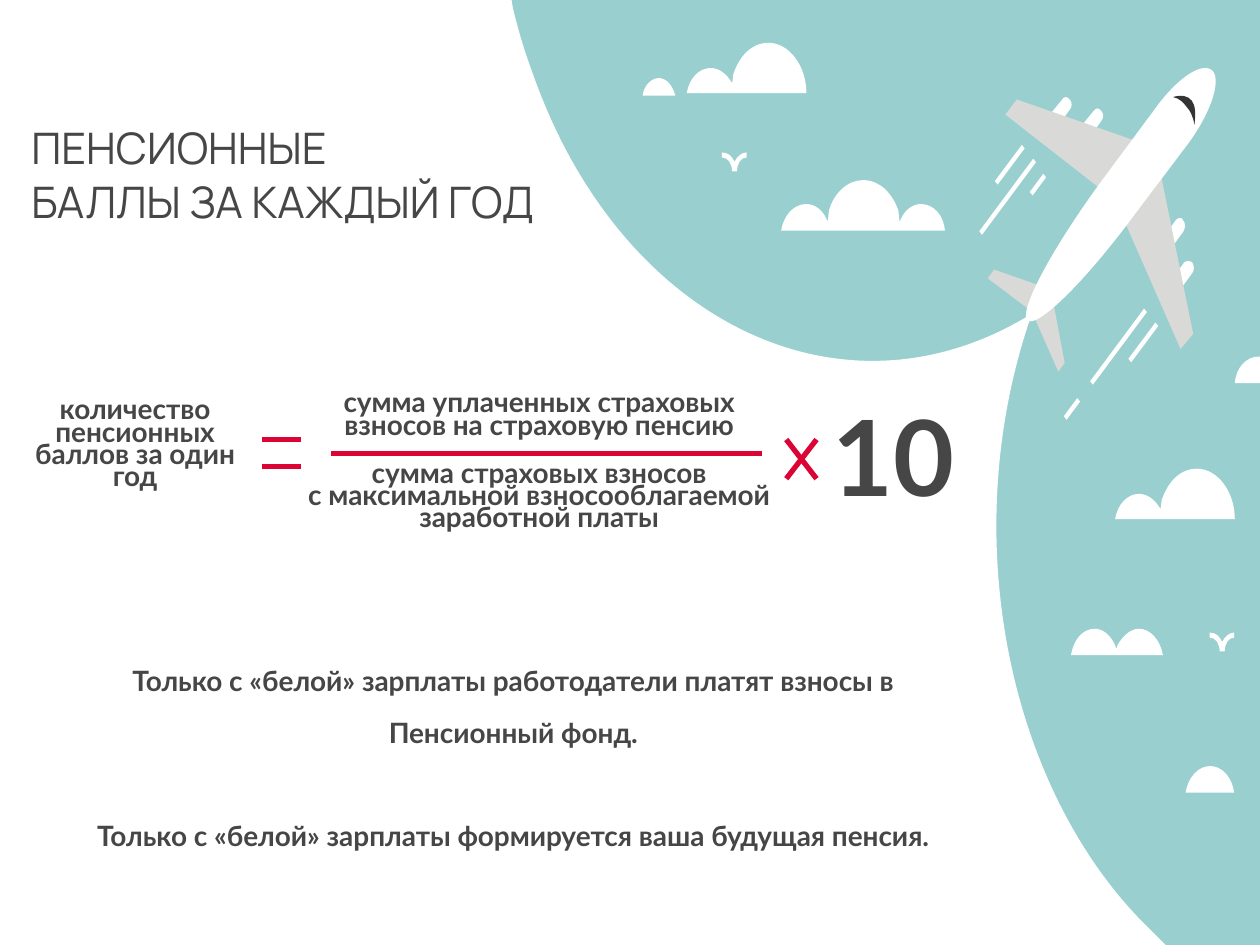
from lxml import etree
from pptx import Presentation
from pptx.dml.color import RGBColor
from pptx.enum.shapes import MSO_CONNECTOR, MSO_SHAPE
from pptx.enum.text import MSO_ANCHOR, MSO_AUTO_SIZE, PP_ALIGN
from pptx.oxml.ns import qn
from pptx.util import Cm, Pt

LINE = MSO_CONNECTOR.STRAIGHT
RECT = MSO_SHAPE.RECTANGLE
TOP = MSO_ANCHOR.TOP
NO_FIT = MSO_AUTO_SIZE.NONE
LEFT, CENTER = PP_ALIGN.LEFT, PP_ALIGN.CENTER

TEAL = RGBColor(0x99, 0xD0, 0xCF)
WHITE = RGBColor(0xFF, 0xFF, 0xFF)
GREY = RGBColor(0xD9, 0xD9, 0xD8)
BLACK = RGBColor(0x34, 0x34, 0x34)
TEXT = RGBColor(0x46, 0x46, 0x46)
RED = RGBColor(0xDC, 0x04, 0x35)

UNIT = Cm(2.54) / 1000

prs = Presentation()
prs.slide_width, prs.slide_height = Cm(25.4), Cm(19.05)
s = prs.slides.add_slide(prs.slide_layouts[5])


def outline(contours, fill, dx=0, dy=0):
    contours = [[[((x + dx) * 10, (y + dy) * 10) for x, y in zip(seg[::2], seg[1::2])]
                 for seg in contour] for contour in contours]
    ends = [[seg[-1] for seg in contour] for contour in contours]
    fb = s.shapes.build_freeform(*ends[0][0], scale=UNIT)
    for i, pts in enumerate(ends):
        if i:
            fb.move_to(*pts[0])
        fb.add_line_segments(pts[1:], close=True)
    sp = fb.convert_to_shape()
    left = min(x for pts in ends for x, y in pts)
    top = min(y for pts in ends for x, y in pts)
    segs = [seg for contour in contours for seg in contour[1:]]
    for ln, seg in zip(list(sp._element.iter(qn("a:lnTo"))), segs):
        if len(seg) == 3:
            ln.tag = qn("a:cubicBezTo")
            for i, (x, y) in enumerate(seg[:2]):
                ln.insert(i, etree.Element(qn("a:pt"), x=str(round(x - left)),
                                           y=str(round(y - top))))
    sp.fill.solid()
    sp.fill.fore_color.rgb = fill
    sp.line.fill.background()
    sp.shadow.inherit = False


def write(sp, lines, size=16, font="Lato", bold=True, align=CENTER,
          spacing=0.5, before=3.2, after=0, gaps={}, top=0.13):
    tf = sp.text_frame
    tf.word_wrap = True
    tf.auto_size = NO_FIT
    tf.vertical_anchor = TOP
    tf.margin_top = Cm(top)
    for i, line in enumerate(lines):
        p = tf.paragraphs[0] if i == 0 else tf.add_paragraph()
        p.alignment = align
        p.line_spacing = spacing
        p.space_before = Pt(gaps.get(i, before) if i else 0)
        p.space_after = Pt(after)
        r = p.add_run()
        r.text = line
        r.font.size, r.font.name, r.font.bold = Pt(size), font, bold
        r.font.color.rgb = TEXT


sky = s.shapes.add_shape(RECT, Cm(10.16), Cm(0), Cm(15.24), Cm(19.05))
sky.fill.solid()
sky.fill.fore_color.rgb = TEAL
sky.line.fill.background()
sky.shadow.inherit = False

outline([[(0, 0), (406, 0), (407, 6), (411, 23, 416, 40, 422, 56),
          (491, 256, 669, 342, 819, 249), (759, 420, 798, 619, 905, 730),
          (925, 750), (0, 750)]], WHITE)

engines = [
    [(943, 207), (944, 207, 945, 207, 946, 208), (948, 211, 948, 215, 946, 217),
     (938, 228), (935, 215), (940, 208), (941, 207, 942, 207, 943, 207)],
    [(936, 173), (937, 173, 939, 173, 939, 175), (941, 177, 941, 181, 939, 184),
     (931, 195), (928, 182), (933, 175), (934, 174, 935, 173, 936, 173)],
    [(871, 86), (872, 86, 873, 87, 874, 88), (876, 90, 876, 94, 874, 96),
     (869, 103), (859, 99), (868, 88), (869, 87, 870, 86, 871, 86)],
    [(846, 77), (847, 77, 848, 78, 849, 79), (851, 81, 851, 85, 849, 87),
     (844, 94), (834, 90), (843, 79), (843, 78, 845, 77, 846, 77)],
]
wings = [
    [(835, 235), (845, 288), (840, 295), (821, 252)],
    [(789, 214), (829, 228), (816, 245), (784, 221)],
    [(921, 141), (922, 142), (947, 265), (937, 277), (894, 179), (893, 178)],
    [(807, 79), (899, 111), (900, 113), (872, 149), (871, 148), (798, 91)],
]
fuselage = [(877, 140), (837, 194, 809, 245, 815, 254), (822, 262, 860, 225, 900, 171),
            (943, 114), (960, 91, 969, 66, 963, 57), (956, 48, 937, 60, 920, 82)]
cockpit = [(942, 85), (945, 88, 947, 93, 948, 99), (949, 91, 949, 84, 946, 80),
           (943, 76, 938, 75, 931, 77), (936, 78, 939, 81, 942, 85)]
trails = []
for x, y, n in ((855, 316, 1), (917, 256, 2), (908, 245, 4),
                (828, 138, 1), (820, 126, 4), (811, 115, 2)):
    w, h = -10.7 * n, 14.4 * n
    trails.append([(x, y), (x + 2.2, y + 2.8), (x + 2.2 + w, y + 2.8 + h), (x + w, y + h)])

outline(engines, WHITE)
outline(wings, GREY)
outline([fuselage], WHITE)
outline([cockpit], BLACK)
outline(trails, WHITE)

tall_cloud = [(65, 0), (81, 0, 95, 18, 95, 40), (0, 40), (2, 28, 10, 20, 19, 20),
              (26, 20, 32, 25, 36, 32), (36, 33), (37, 25), (42, 10, 52, 0, 65, 0)]
triple_cloud = [(65, 0), (78, 0, 88, 10, 93, 24), (94, 33), (95, 31),
                (98, 24, 104, 19, 111, 19), (121, 19, 129, 28, 130, 40), (0, 40),
                (2, 28, 10, 19, 20, 19), (27, 19, 33, 24, 36, 31), (37, 33),
                (38, 24), (42, 10, 53, 0, 65, 0)]
twin_cloud = [(19, 0), (26, 0, 32, 6, 35, 13), (36, 16), (37, 13), (41, 6, 47, 0, 54, 0),
              (63, 0, 71, 9, 73, 21), (0, 21), (2, 9, 9, 0, 19, 0)]
small_cloud = [(26, 14), (24, 6, 19, 0, 13, 0), (7, 0, 1, 6, 0, 14)]
round_cloud = [(38.5, 21), (37, 9, 29, 0, 19.5, 0), (10, 0, 2, 9, 0, 21)]
edge_cloud = [(19, 0), (20, 0), (20, 21), (0, 21), (1, 9, 9, 0, 19, 0)]
bird = [(12, 15), (8, 15), (8, 9, 5, 4, 0, 4), (0, 0), (5, 0, 8, 3, 10, 7.5),
        (12, 3, 16, 0, 19.5, 0), (19.5, 4), (15, 4, 12, 9, 12, 15)]
for shape, x, y in ((tall_cloud, 545, 34), (small_cloud, 510, 62), (triple_cloud, 620, 143),
                    (bird, 573, 121), (tall_cloud, 885, 372), (round_cloud, 941, 608),
                    (twin_cloud, 850, 499), (bird, 960, 502), (edge_cloud, 980, 283)):
    outline([shape], WHITE, x, y)

title = s.shapes.title
title._element.getparent().append(title._element)
title.left, title.top, title.width, title.height = Cm(0.38), Cm(2.59), Cm(25.4), Cm(2.13)
write(title, ["ПЕНСИОННЫЕ", "БАЛЛЫ ЗА КАЖДЫЙ ГОД"], size=24.8, font="Manrope",
      bold=False, align=LEFT, spacing=0.7, before=10)

for box, lines, style in (
    ((0.89, 12.07, 18.92, 4.52),
     ["Только с «белой» зарплаты работодатели платят взносы в", "Пенсионный фонд.",
      "Только с «белой» зарплаты формируется ваша будущая пенсия."],
     dict(spacing=0.7, before=6.5, after=10, gaps={2: 35.4}, top=1.49)),
    ((-1.67, 8.06, 8.79, 3.2),
     ["количество", "пенсионных", "баллов за один", "год"], {}),
    ((2.97, 7.92, 15.8, 4.52),
     ["сумма уплаченных страховых", "взносов на страховую пенсию",
      "сумма страховых взносов", "с максимальной взносооблагаемой", "заработной платы"],
     dict(gaps={2: 17.8})),
    ((16.21, 8.86, 3.61, 3.73), ["10"], dict(size=60)),
):
    write(s.shapes.add_textbox(*map(Cm, box)), lines, **style)

for x1, y1, x2, y2, width in (
    (6.68, 9.14, 15.37, 9.14, 3.25),
    (15.85, 8.86, 16.46, 9.65, 3),
    (15.85, 9.65, 16.46, 8.86, 3),
    (5.28, 9.4, 6.07, 9.4, 3),
    (5.28, 8.86, 6.07, 8.86, 3),
):
    ln = s.shapes.add_connector(LINE, Cm(x1), Cm(y1), Cm(x2), Cm(y2))
    ln.line.color.rgb = RED
    ln.line.width = Pt(width)
    etree.SubElement(ln._element.spPr, qn("a:effectLst"))

prs.save("out.pptx")
